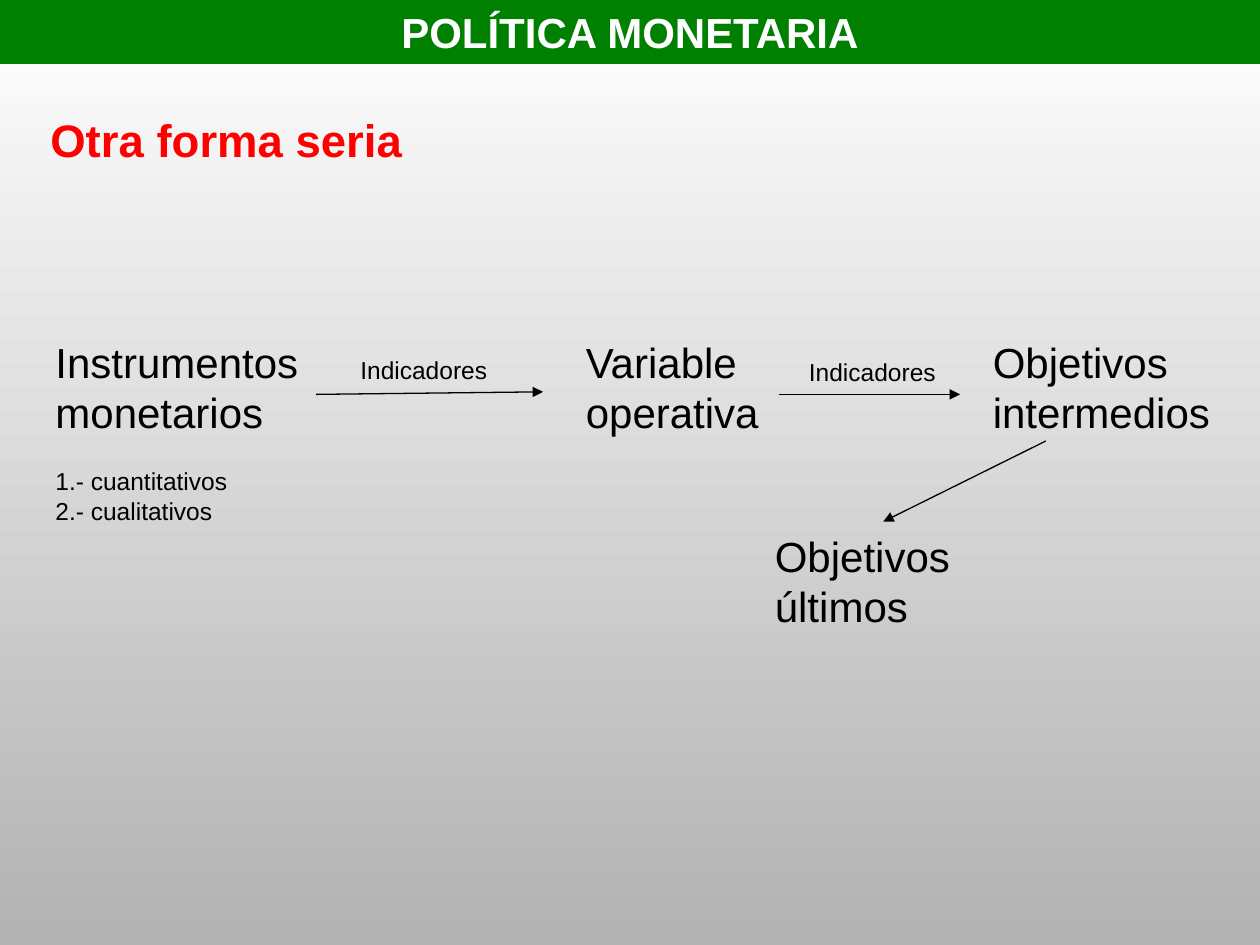
from dataclasses import dataclass

from lxml import etree
from pptx import Presentation
from pptx.dml.color import RGBColor
from pptx.enum.shapes import MSO_CONNECTOR, MSO_SHAPE
from pptx.enum.text import MSO_ANCHOR, PP_ALIGN
from pptx.oxml.ns import qn
from pptx.slide import Slide
from pptx.text.text import TextFrame
from pptx.util import Inches, Pt

RECT = MSO_SHAPE.RECTANGLE
STRAIGHT = MSO_CONNECTOR.STRAIGHT
TOP, MIDDLE = MSO_ANCHOR.TOP, MSO_ANCHOR.MIDDLE
LEFT, CENTER = PP_ALIGN.LEFT, PP_ALIGN.CENTER


@dataclass(frozen=True)
class Theme:
    font: str = "Arial"
    black: RGBColor = RGBColor(0, 0, 0)
    white: RGBColor = RGBColor(255, 255, 255)
    gray: RGBColor = RGBColor(0xB2, 0xB2, 0xB2)
    green: RGBColor = RGBColor(0, 0x80, 0)
    red: RGBColor = RGBColor(255, 0, 0)
    head: float = 26
    large: float = 24
    small: float = 14
    line: float = 0.75


THEME = Theme()


@dataclass(frozen=True)
class Label:
    lines: tuple[str, ...]
    left: float
    top: float
    width: float
    height: float
    size: float = THEME.large
    color: RGBColor = THEME.black
    bold: bool = False
    inset: tuple[float, float] = (0.13, 0.07)
    anchor: MSO_ANCHOR = TOP
    align: PP_ALIGN = LEFT


@dataclass(frozen=True)
class Arrow:
    start: tuple[float, float]
    end: tuple[float, float]


ROW = 2.6
TALL = 0.94
BANNER = Label(("POLÍTICA MONETARIA",), 0, 0, 10, 0.5, color=THEME.white,
               bold=True, inset=(0.1, 0.05), anchor=MIDDLE, align=CENTER)
LABELS = (
    Label(("Otra forma seria",), 0.33, 0.85, 9.28, 0.51, THEME.head,
          THEME.red, True, (0.07, 0.04), MIDDLE),
    Label(("Instrumentos monetarios",), 0.31, ROW, 2.39, TALL),
    Label(("Variable operativa",), 4.52, ROW, 1.97, TALL),
    Label(("Objetivos intermedios",), 7.75, ROW, 2.13, TALL),
    Label(("Objetivos últimos",), 6.02, 4.14, 1.97, TALL),
    Label(("Indicadores",), 2.73, 2.75, 1.5, 0.37, THEME.small),
    Label(("Indicadores",), 6.29, 2.76, 1.33, 0.37, THEME.small),
    Label(("1.- cuantitativos", "2.- cualitativos"),
          0.31, 3.63, 1.81, 0.61, THEME.small),
)
ARROWS = (
    Arrow((2.51, 3.13), (4.31, 3.11)),
    Arrow((6.18, 3.13), (7.62, 3.13)),
    Arrow((8.3, 3.5), (7.01, 4.14)),
)


def paint_back(slide: Slide) -> None:
    fill = slide.background.fill
    fill.gradient()
    fill.gradient_angle = 270
    for stop, color in zip(fill.gradient_stops, (THEME.white, THEME.gray)):
        stop.color.rgb = color


def write(frame: TextFrame, label: Label) -> None:
    frame.word_wrap = True
    frame.vertical_anchor = label.anchor
    side, edge = map(Inches, label.inset)
    frame.margin_left = frame.margin_right = side
    frame.margin_top = frame.margin_bottom = edge
    for i, line in enumerate(label.lines):
        para = frame.add_paragraph() if i else frame.paragraphs[0]
        para.alignment = label.align
        run = para.add_run()
        run.text = line
        run.font.name = THEME.font
        run.font.size = Pt(label.size)
        run.font.bold = label.bold
        run.font.color.rgb = label.color


def place(label: Label) -> tuple[Inches, ...]:
    """Give the left, top, width and height of a label as lengths."""
    return tuple(map(Inches, (label.left, label.top, label.width, label.height)))


def draw_label(slide: Slide, label: Label) -> None:
    write(slide.shapes.add_textbox(*place(label)).text_frame, label)


def draw_arrow(slide: Slide, arrow: Arrow) -> None:
    ends = map(Inches, (*arrow.start, *arrow.end))
    link = slide.shapes.add_connector(STRAIGHT, *ends)
    link.line.color.rgb = THEME.black
    link.line.width = Pt(THEME.line)
    tail = etree.SubElement(link.line._get_or_add_ln(), qn("a:tailEnd"))
    tail.set("type", "triangle")
    etree.SubElement(link._element.spPr, qn("a:effectLst"))


def draw_banner(slide: Slide, label: Label) -> None:
    bar = slide.shapes.add_shape(RECT, *place(label))
    bar.shadow.inherit = False
    bar.fill.solid()
    bar.fill.fore_color.rgb = THEME.green
    bar.line.color.rgb = THEME.green
    bar.line.width = Pt(THEME.line)
    write(bar.text_frame, label)


def main() -> None:
    deck = Presentation()
    deck.slide_width, deck.slide_height = Inches(10), Inches(7.5)
    slide = deck.slides.add_slide(deck.slide_layouts[6])
    paint_back(slide)
    for label in LABELS:
        draw_label(slide, label)
    for arrow in ARROWS:
        draw_arrow(slide, arrow)
    draw_banner(slide, BANNER)
    deck.save("out.pptx")


if __name__ == "__main__":
    main()
